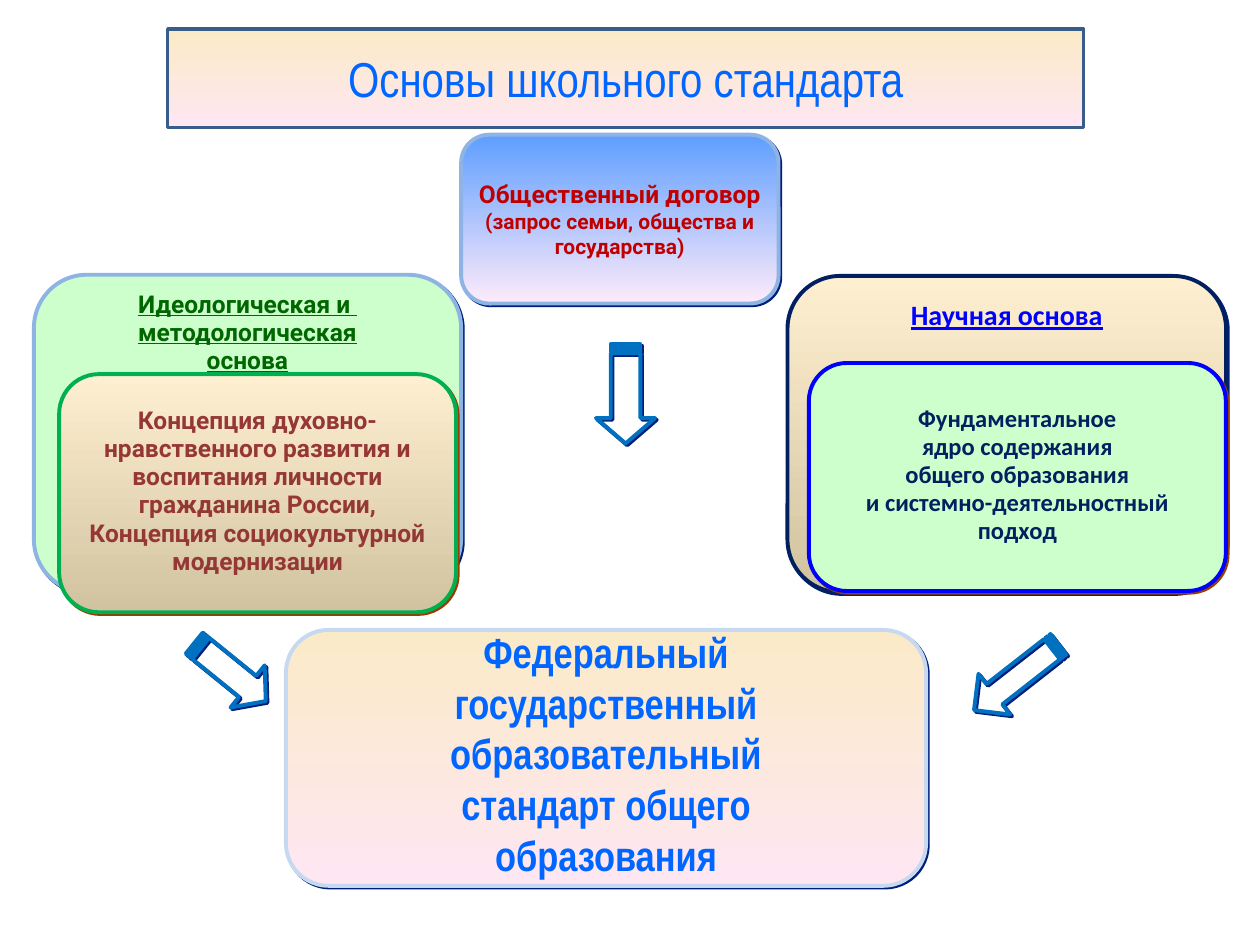
from lxml import etree
from pptx import Presentation
from pptx.dml.color import RGBColor
from pptx.enum import shapes, text
from pptx.oxml import ns
from pptx.util import Pt

THEME = {
    "peach": ("FBEAC7", "FEE7F2"),
    "sky": ("5E9EFF", "FFEBFA"),
    "sand": ("FFEFD1", "D1C39F"),
    "mint": "CCFFCC",
    "blue_text": "0066FF",
    "navy": "002060",
    "pure_blue": "0000FF",
    "pale_blue": "8EB4E3",
    "arrow": "0070C0",
    "blue_shadow": "001F7A",
    "brown_shadow": "993D00",
    "title_size": 28,
    "standard_size": 24,
    "heading_size": 16,
    "body_size": 14,
    "small_size": 12,
    "line_width": 2.25,
}

TITLE = {
    "at": (95.8, 16.6, 523.4, 56.2), "fill": "peach", "line": "385D8A", "width": 2,
    "lines": ["Основы школьного стандарта"],
    "font": "Arial Narrow", "size": "title_size", "color": "blue_text", "bold": False,
}

# Boxes from back to front; "top" is the inset of a heading that sits above an inner box
BOXES = [
    {"at": (263.5, 77, 181.4, 96.5), "fill": "sky", "line": "pale_blue",
     "lines": ["Общественный договор", "(запрос семьи, общества и", "государства)"],
     "font": "Roboto", "size": "body_size", "rest": "small_size", "color": "C00000"},
    {"at": (19.4, 157, 244.1, 181.4), "fill": "mint", "line": "pale_blue",
     "lines": ["Идеологическая и ", "методологическая", "основа"],
     "font": "Roboto", "size": "body_size", "color": "006600", "underline": True,
     "top": 3, "spacing": 0.75, "before": 3.5},
    {"at": (33.8, 213.8, 226.8, 136.1), "fill": "sand", "line": "00B050",
     "shadow": "brown_shadow",
     "lines": ["Концепция духовно-", "нравственного развития и", "воспитания личности",
               "гражданина России,", "Концепция социокультурной", "модернизации"],
     "font": "Roboto", "size": "body_size", "color": "953735",
     "spacing": 0.75, "before": 3.5},
    {"at": (450, 157.7, 250.6, 180.7), "fill": "sand", "line": "navy",
     "lines": ["Научная основа"],
     "font": "Calibri", "size": "heading_size", "color": "pure_blue", "underline": True,
     "top": 8, "spacing": 0.75},
    {"at": (462.2, 207.4, 238.3, 130.3), "fill": "mint", "line": "pure_blue",
     "shadow": "brown_shadow",
     "lines": ["Фундаментальное", "ядро содержания", "общего образования",
               "и системно-деятельностный", "подход"],
     "font": "Calibri", "size": "body_size", "color": "navy",
     "spacing": 0.75, "before": 3.5},
    {"at": (163.4, 360, 365.8, 146.2), "fill": "peach", "line": "C6D9F1",
     "lines": ["Федеральный", "государственный", "образовательный",
               "стандарт общего", "образования"],
     "font": "Arial Narrow", "size": "standard_size", "color": "blue_text",
     "spacing": 0.8, "before": 6},
]

# Frame before rotation, rotation, relative head length
ARROWS = [
    ((329, 208.1, 56.9, 33.8), 90, 0.43),
    ((105.1, 368.6, 52.6, 31), 39, 0.43),
    ((550.1, 372.2, 61.2, 29.5), 142, 0.5),
]


def rgb(name):
    return RGBColor.from_string(THEME.get(name, name))


def add_shadow(shape, color):
    effects = shape._element.spPr.find(ns.qn("a:effectLst"))
    shadow = etree.SubElement(effects, ns.qn("a:outerShdw"), dist=str(Pt(1.4)),
                              dir="2700000", algn="tl", rotWithShape="0")
    etree.SubElement(shadow, ns.qn("a:srgbClr"), val=THEME[color])


def set_outline(shape, color, width=THEME["line_width"]):
    shape.line.color.rgb = rgb(color)
    shape.line.width = Pt(width)
    shape.shadow.inherit = False


def set_fill(shape, name):
    paint = THEME[name]
    if isinstance(paint, str):
        shape.fill.solid()
        shape.fill.fore_color.rgb = rgb(name)
        return
    shape.fill.gradient()
    shape.fill.gradient_angle = 270
    for stop, color in zip(shape.fill.gradient_stops, paint):
        stop.color.rgb = rgb(color)


def set_text(shape, box):
    frame = shape.text_frame
    frame.text = "\n".join(box["lines"])
    frame.word_wrap = True
    frame.vertical_anchor = text.MSO_ANCHOR.TOP if "top" in box else text.MSO_ANCHOR.MIDDLE
    frame.margin_top = Pt(box.get("top", 3.6))
    frame.margin_left = frame.margin_right = Pt(0)
    for index, paragraph in enumerate(frame.paragraphs):
        paragraph.alignment = text.PP_ALIGN.CENTER
        paragraph.line_spacing = box.get("spacing", 1.0)
        paragraph.space_before = Pt(box.get("before", 0) if index else 0)
        size = box.get("rest", box["size"]) if index else box["size"]
        for run in paragraph.runs:
            run.font.name = box["font"]
            run.font.size = Pt(THEME[size])
            run.font.bold = box.get("bold", True)
            run.font.underline = box.get("underline", False)
            run.font.color.rgb = rgb(box["color"])


def main():
    prs = Presentation()
    prs.slide_width, prs.slide_height = Pt(720), Pt(540)
    slide = prs.slides.add_slide(prs.slide_layouts[5])

    # Title placeholder as a rounded panel
    title = slide.shapes.title
    title.left, title.top, title.width, title.height = map(Pt, TITLE["at"])
    outline = etree.SubElement(title._element.spPr, ns.qn("a:prstGeom"), prst="roundRect")
    etree.SubElement(outline, ns.qn("a:avLst"))
    set_fill(title, TITLE["fill"])
    set_outline(title, TITLE["line"], TITLE["width"])
    set_text(title, TITLE)

    # Foundations and the resulting standard
    for box in BOXES:
        panel = slide.shapes.add_shape(shapes.MSO_SHAPE.ROUNDED_RECTANGLE, *map(Pt, box["at"]))
        set_fill(panel, box["fill"])
        set_outline(panel, box["line"])
        add_shadow(panel, box.get("shadow", "blue_shadow"))
        set_text(panel, box)

    # Arrows leading to the standard
    for at, rotation, head in ARROWS:
        arrow = slide.shapes.add_shape(shapes.MSO_SHAPE.STRIPED_RIGHT_ARROW, *map(Pt, at))
        arrow.rotation = rotation
        arrow.adjustments[1] = head
        arrow.fill.background()
        set_outline(arrow, "arrow")
        add_shadow(arrow, "blue_shadow")

    prs.save("out.pptx")


if __name__ == "__main__":
    main()
